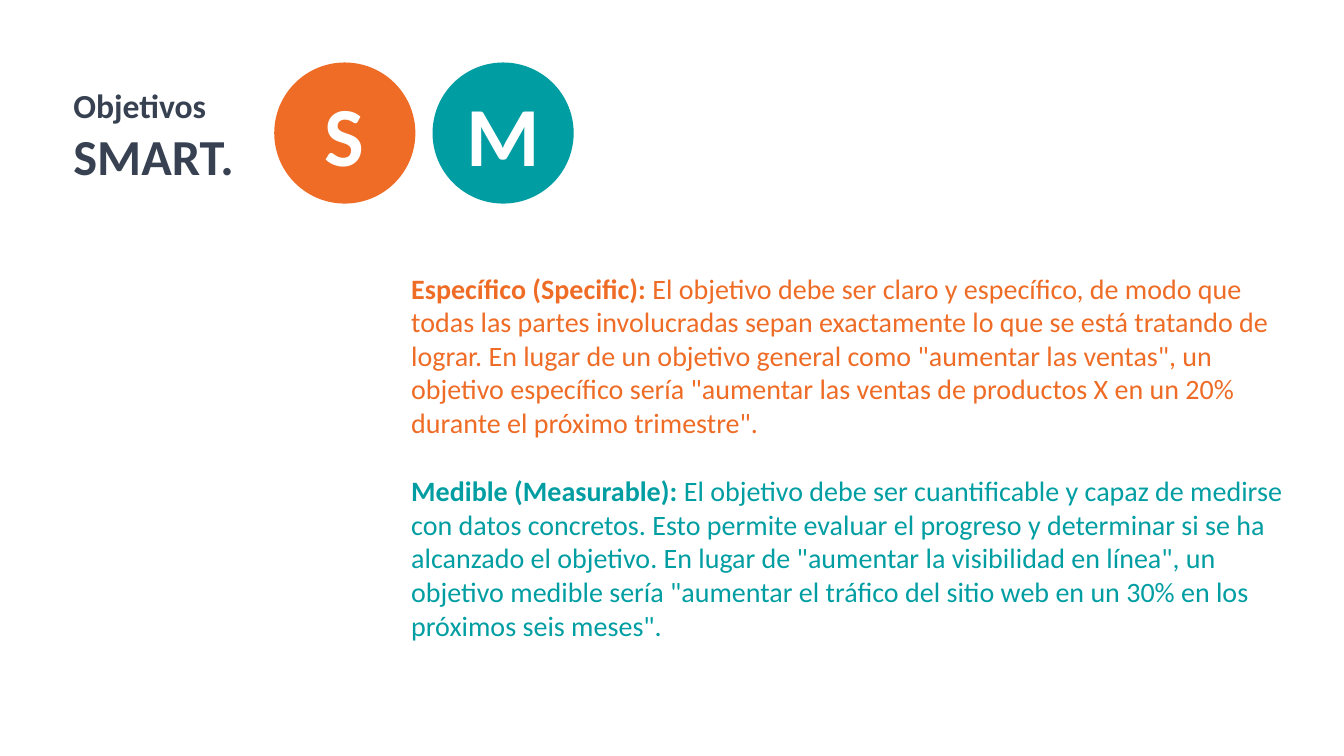
from pptx import Presentation
from pptx.dml.color import RGBColor
from pptx.enum.shapes import MSO_SHAPE
from pptx.enum.text import MSO_AUTO_SIZE, PP_ALIGN
from pptx.util import Inches, Pt

OVAL = MSO_SHAPE.OVAL
GROW = MSO_AUTO_SIZE.SHAPE_TO_FIT_TEXT
LEFT, CENTER = PP_ALIGN.LEFT, PP_ALIGN.CENTER
COLORS = {"orange": "EE6C26", "teal": "009EA2", "slate": "374151", "white": "FFFFFF"}

GOALS = [
    ("S", "orange", "Específico (Specific): ",
     "El objetivo debe ser claro y específico, de modo que todas las partes "
     "involucradas sepan exactamente lo que se está tratando de lograr. En lugar "
     'de un objetivo general como "aumentar las ventas", un objetivo específico '
     'sería "aumentar las ventas de productos X en un 20% durante el próximo '
     'trimestre".'),
    ("M", "teal", "Medible (Measurable): ",
     "El objetivo debe ser cuantificable y capaz de medirse con datos concretos. "
     "Esto permite evaluar el progreso y determinar si se ha alcanzado el "
     'objetivo. En lugar de "aumentar la visibilidad en línea", un objetivo '
     'medible sería "aumentar el tráfico del sitio web en un 30% en los próximos '
     'seis meses".'),
]


def add_run(para, text, size=20, color="slate", bold=True, face="Calibri"):
    run = para.add_run()
    run.text = text
    run.font.name = face
    run.font.size = Pt(size)
    run.font.bold = bold
    run.font.color.rgb = RGBColor.from_string(COLORS[color])


class Canvas:
    def __init__(self, slide):
        self.slide = slide

    def disc(self, left, top, size, color):
        disc = self.slide.shapes.add_shape(
            OVAL, Inches(left), Inches(top), Inches(size), Inches(size))
        disc.shadow.inherit = False
        disc.fill.solid()
        disc.fill.fore_color.rgb = RGBColor.from_string(COLORS[color])
        disc.line.fill.background()

    def text(self, left, top, width, height, lines, align=LEFT):
        box = self.slide.shapes.add_textbox(
            Inches(left), Inches(top), Inches(width), Inches(height))
        frame = box.text_frame
        frame.word_wrap = True
        frame.auto_size = GROW
        for i, runs in enumerate(lines):
            para = frame.add_paragraph() if i else frame.paragraphs[0]
            para.alignment = align
            for text, style in runs:
                add_run(para, text, **style)


def main():
    deck = Presentation()
    deck.slide_width, deck.slide_height = Inches(13.33), Inches(7.5)
    canvas = Canvas(deck.slides.add_slide(deck.slide_layouts[6]))

    canvas.text(0.63, 0.79, 10.23, 1.11,
                [[("Objetivos", {"size": 24})], [("SMART.", {"size": 36})]])
    for i, (letter, color, name, body) in enumerate(GOALS):
        left = 2.72 + 1.57 * i
        canvas.disc(left, 0.62, 1.4, color)
        canvas.text(left + 0.13, 0.77, 1.14, 1.11,
                    [[(letter, {"size": 60, "color": "white"})]], CENTER)
        canvas.text(3.98, 2.64 + 2.01 * i, 9.05, 1.78,
                    [[(name, {"color": color}),
                      (body, {"color": color, "bold": False})]])
    deck.save("out.pptx")


if __name__ == "__main__":
    main()
